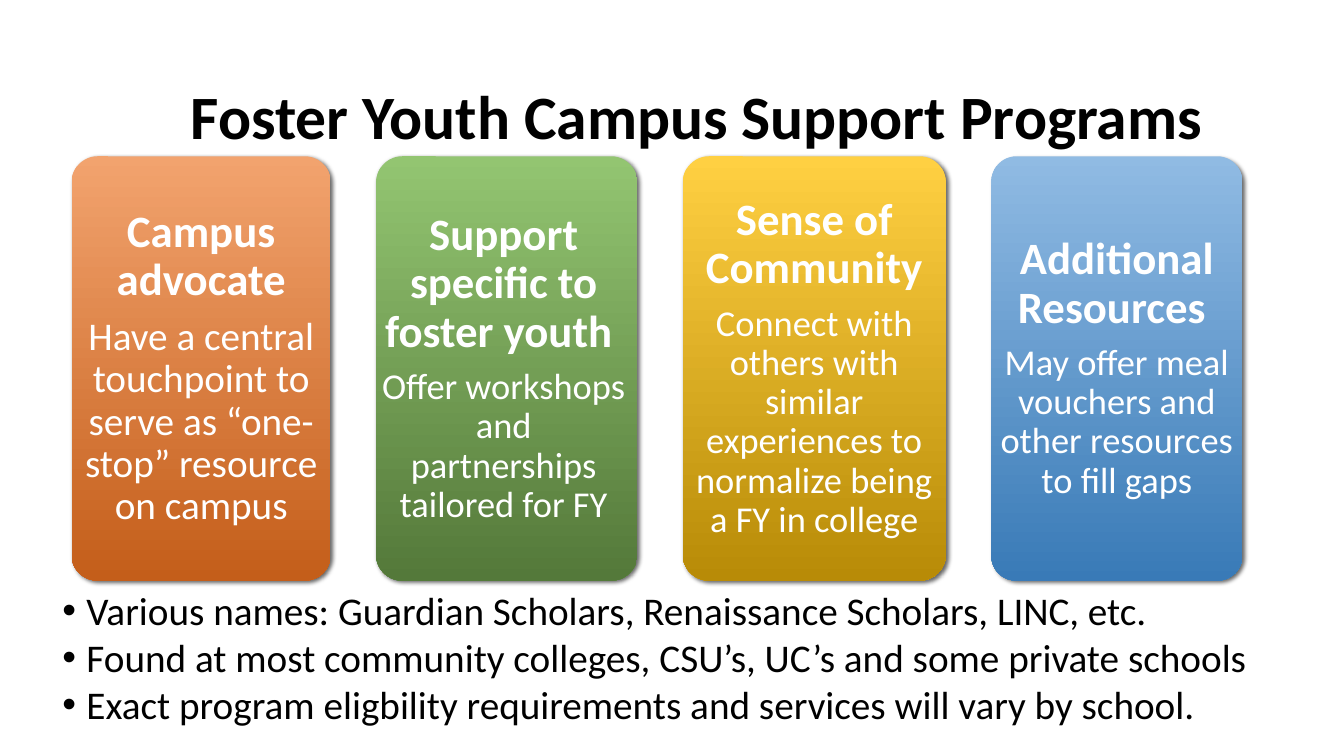
"""Builds the slide on campus support programs for foster youth."""
from lxml.etree import SubElement
from pptx import Presentation
from pptx.dml.color import RGBColor
from pptx.enum.shapes import MSO_SHAPE
from pptx.enum.text import MSO_ANCHOR as ANCHOR, MSO_AUTO_SIZE, PP_ALIGN as ALIGN
from pptx.oxml.ns import qn
from pptx.util import Inches, Pt

W, H = Inches(13.33), Inches(7.5)
CARD_LEFT, CARD_TOP, CARD_HEIGHT, CARD_GAP = 5.33, 20.67, 56.13, 3.38
CARDS = [
    (19.28, 19.28, "F2A36E", "C45E1A", 28, "Campus advocate",
     "Have a central touchpoint to serve as “one-stop” resource on campus"),
    (19.43, 19.88, "93C571", "54793A", 26, "Support specific to foster youth ",
     "Offer workshops and partnerships tailored for FY"),
    (19.58, 19.58, "FFD042", "B88B07", 26, "Sense of Community",
     "Connect with others with similar experiences to normalize being a FY in college"),
    (18.68, 18.68, "90BBE3", "397AB7", 26, "Additional Resources ",
     "May offer meal vouchers and other resources to fill gaps"),
]
NOTES = [
    "Various names: Guardian Scholars, Renaissance Scholars, LINC, etc.",
    "Found at most community colleges, CSU’s, UC’s and some private schools",
    "Exact program eligbility requirements and services will vary by school.",
]


def rgb(value):
    """Turn a hex string into a colour."""
    return RGBColor.from_string(value)


def area(left, top, width, height):
    """Turn percentages of the slide's size into lengths."""
    return [int(size * share / 100)
            for size, share in ((W, left), (H, top), (W, width), (H, height))]


def prepare(tf, anchor, inset_x=0.1, inset_y=0.05):
    """Set wrapping, anchor and insets of a text frame."""
    tf.word_wrap, tf.auto_size, tf.vertical_anchor = True, MSO_AUTO_SIZE.NONE, anchor
    tf.margin_left = tf.margin_right = Inches(inset_x)
    tf.margin_top = tf.margin_bottom = Inches(inset_y)
    return tf


def write(tf, text, size, color="000000", bold=False, align=ALIGN.LEFT,
          spacing=1.0, before=0, bullet=False):
    """Write one formatted paragraph, filling the empty first one if there is one."""
    first = tf.paragraphs[0]
    p = tf.add_paragraph() if first.runs else first
    p.alignment, p.line_spacing, p.space_before = align, spacing, Pt(before)
    if bullet:
        pPr = p._p.get_or_add_pPr()
        pPr.set("marL", str(Inches(0.5)))
        pPr.set("indent", str(Inches(-0.24)))
        SubElement(pPr, qn("a:buFont"), typeface="Arial")
        SubElement(pPr, qn("a:buChar"), char="•")
    r = p.add_run()
    r.text = text
    r.font.name, r.font.size, r.font.bold = "Calibri", Pt(size), bold
    r.font.color.rgb = rgb(color)


def add_title(s, text):
    """Place and format the title."""
    sp = s.shapes.title
    sp.left, sp.top, sp.width, sp.height = area(8.33, 5.07, 87.1, 15.73)
    write(prepare(sp.text_frame, ANCHOR.BOTTOM), text, 44, bold=True,
          align=ALIGN.CENTER, spacing=0.85)


def add_panel(s, box, top_color, bottom_color):
    """Draw a rounded panel with a vertical gradient and a soft shadow."""
    sp = s.shapes.add_shape(MSO_SHAPE.ROUNDED_RECTANGLE, *box)
    sp.adjustments[0] = 0.1
    sp.fill.gradient()
    sp.fill.gradient_angle = 270
    for stop, color, position in zip(sp.fill.gradient_stops,
                                     (top_color, bottom_color), (0, 1)):
        stop.color.rgb, stop.position = rgb(color), position
    sp.line.fill.background()
    sp.shadow.inherit = False
    effects = sp._element.spPr.find(qn("a:effectLst"))
    shadow = SubElement(effects, qn("a:outerShdw"), blurRad=str(Pt(3)),
                        dist=str(Pt(2)), dir=str(45 * 60000), rotWithShape="0")
    black = SubElement(shadow, qn("a:srgbClr"), val="000000")
    SubElement(black, qn("a:alpha"), val="60000")


def add_card(s, left, width, text_width, top_color, bottom_color, size, heading, body):
    """Draw a card with its heading and description."""
    add_panel(s, area(left, CARD_TOP, width, CARD_HEIGHT), top_color, bottom_color)
    text_left = left + width - text_width
    sp = s.shapes.add_textbox(*area(text_left, CARD_TOP, text_width, CARD_HEIGHT))
    tf = prepare(sp.text_frame, ANCHOR.MIDDLE, 0.09, 0.09)
    style = dict(color="FFFFFF", align=ALIGN.CENTER, spacing=0.9)
    write(tf, heading, 32, bold=True, **style)
    write(tf, body, size, before=8, **style)


def add_notes(s, lines):
    """Write the bulleted list under the cards."""
    sp = s.shapes.add_textbox(*area(1.95, 76.93, 94.6, 24.53))
    tf = prepare(sp.text_frame, ANCHOR.TOP)
    for line in lines:
        write(tf, line, 28, bullet=True)


def main():
    """Build and save the slide."""
    prs = Presentation()
    prs.slide_width, prs.slide_height = W, H
    s = prs.slides.add_slide(prs.slide_layouts[5])
    add_title(s, "Foster Youth Campus Support Programs")
    add_notes(s, NOTES)
    left = CARD_LEFT
    for width, *content in CARDS:
        add_card(s, left, width, *content)
        left += width + CARD_GAP
    prs.save("out.pptx")


if __name__ == "__main__":
    main()
